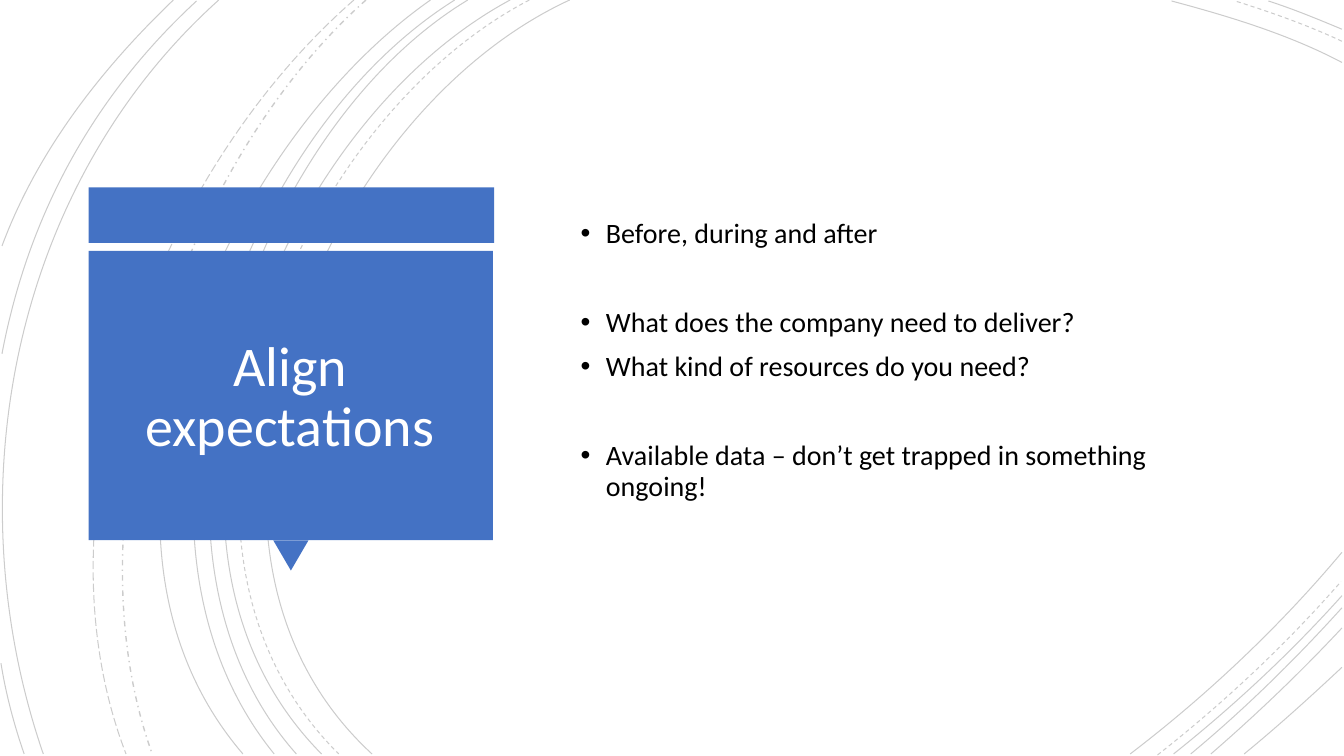
from lxml.etree import SubElement
from pptx import Presentation
from pptx.dml.color import RGBColor
from pptx.enum.dml import MSO_LINE
from pptx.enum.shapes import MSO_SHAPE
from pptx.enum.text import MSO_ANCHOR, MSO_AUTO_SIZE, PP_ALIGN
from pptx.oxml.ns import qn
from pptx.util import Inches, Pt

BLUE, BLACK, WHITE = "4472C4", "000000", "FFFFFF"
SOLID, DASH = MSO_LINE.SOLID, MSO_LINE.DASH
LONG, DOT = MSO_LINE.LONG_DASH, MSO_LINE.DASH_DOT

# Each arc: dash, then start, two control points and end as x, y pairs
ARCS = [
    (SOLID, 5.65, 0, 3.15, 1.15, 1.43, 5.4, 3.69, 7.48),
    (SOLID, 13.31, 0.62, 12.78, 0.34, 12.18, 0.16, 11.62, 0.01),
    (SOLID, 11.21, 7.48, 11.97, 6.9, 12.69, 6.22, 13.31, 5.48),
    (DASH, 5.25, 0, 2.85, 1.25, 1.23, 5.37, 3.36, 7.48),
    (DASH, 13.31, 0.41, 12.97, 0.25, 12.6, 0.12, 12.25, 0.01),
    (DASH, 11.48, 7.49, 12.13, 6.98, 12.75, 6.4, 13.3, 5.77),
    (SOLID, 5.06, 0, 2.7, 1.27, 1.1, 5.37, 3.19, 7.48),
    (SOLID, 13.31, 0.29, 13.07, 0.19, 12.83, 0.09, 12.58, 0.01),
    (SOLID, 11.64, 7.48, 12.23, 7.01, 12.8, 6.48, 13.31, 5.91),
    (SOLID, 4.64, 0, 2.44, 1.33, 1.1, 5.41, 2.94, 7.48),
    (SOLID, 11.81, 7.48, 12.34, 7.04, 12.84, 6.55, 13.31, 6.03),
    (SOLID, 4.51, 0, 2.31, 1.38, 0.97, 5.33, 2.72, 7.48),
    (SOLID, 12.01, 7.48, 12.46, 7.09, 12.9, 6.67, 13.31, 6.23),
    (SOLID, 4.27, 0, 2.17, 1.47, 0.53, 5.29, 2.41, 7.48),
    (SOLID, 12.34, 7.48, 12.67, 7.21, 12.99, 6.92, 13.31, 6.62),
    (DOT, 3.63, 0, 1.76, 1.66, 0.65, 5.09, 1.51, 7.48),
    (LONG, 3.51, 0, 1.57, 1.69, 0.29, 4.99, 1.25, 7.48),
    (SOLID, 2.17, 0, 0.11, 1.85, -0.46, 4.9, 0.43, 7.48),
    (SOLID, 1.95, 0.01, 0.92, 0.96, 0.28, 2.14, 0.02, 3.51),
    (SOLID, 0.01, 6.58, 0.06, 6.89, 0.14, 7.19, 0.24, 7.48),
    (SOLID, 1.72, 0, 1, 0.69, 0.37, 1.5, 0.02, 2.44),
]

# Each point: space before in points, text
POINTS = [
    (10, "Before, during and after"),
    (42, "What does the company need to deliver?"),
    (10, "What kind of resources do you need?"),
    (42, "Available data – don’t get trapped in something ongoing!"),
]


def color(code):
    return RGBColor.from_string(code)


class Deck:
    def __init__(self, slide, font="Calibri"):
        self.slide, self.font = slide, font

    def group(self):
        return self.slide.shapes.add_group_shape().shapes

    def arc(self, group, dash, *nums):
        """Draw one open Bezier curve as a faint line."""
        spots = [(Inches(x), Inches(y)) for x, y in zip(nums[::2], nums[1::2])]
        pen = group.build_freeform(*spots[0])
        pen.add_line_segments(spots[1:], close=False)
        shape = pen.convert_to_shape()
        shape.shadow.inherit = False
        shape.fill.background()
        line = shape.line
        line.color.rgb = color(BLACK)
        line.width = Pt(1 if dash == DOT else 0.75)
        line.dash_style = dash
        tint = line._ln.find(".//" + qn("a:srgbClr"))
        SubElement(tint, qn("a:alpha"), val="20000")
        # Turn the three straight segments into one cubic curve
        trace = shape.element.find(".//" + qn("a:path"))
        curve = SubElement(trace, qn("a:cubicBezTo"))
        for step in trace.findall(qn("a:lnTo")):
            curve.append(step[0])
            trace.remove(step)

    def block(self, group, kind, box, turn=0):
        shape = group.add_shape(kind, *map(Inches, box))
        shape.shadow.inherit = False
        shape.fill.solid()
        shape.fill.fore_color.rgb = color(BLUE)
        shape.line.fill.background()
        shape.rotation = turn

    def place(self, holder, box):
        """Move a placeholder to the front and set its text frame."""
        tree = holder.element.getparent()
        tree.append(holder.element)
        holder.left, holder.top, holder.width, holder.height = map(Inches, box)
        frame = holder.text_frame
        frame.word_wrap = True
        frame.auto_size = MSO_AUTO_SIZE.NONE
        frame.vertical_anchor = MSO_ANCHOR.MIDDLE
        return frame

    def style(self, para, size, code):
        para.line_spacing = 0.9
        para.font.name, para.font.size = self.font, Pt(size)
        para.font.color.rgb = color(code)

    def title(self, text, box):
        para = self.place(self.slide.shapes.title, box).paragraphs[0]
        para.text = text
        para.alignment = PP_ALIGN.CENTER
        self.style(para, 40, WHITE)

    def body(self, points, box):
        frame = self.place(self.slide.placeholders[1], box)
        frame.margin_bottom = Inches(0.39)
        for num, (gap, text) in enumerate(points):
            para = frame.add_paragraph() if num else frame.paragraphs[0]
            para.text = text
            para.space_before = Pt(gap)
            self.style(para, 20, BLACK)
            props = para._p.get_or_add_pPr()
            props.set("marL", str(Inches(0.31)))
            props.set("indent", str(Inches(-0.25)))


def main():
    show = Presentation()
    show.slide_width, show.slide_height = Inches(13.33), Inches(7.5)
    deck = Deck(show.slides.add_slide(show.slide_layouts[1]))

    arcs = deck.group()
    for arc in ARCS:
        deck.arc(arcs, *arc)

    panel = deck.group()
    deck.block(panel, MSO_SHAPE.RECTANGLE, (0.88, 1.86, 4.02, 0.55))
    deck.block(panel, MSO_SHAPE.ISOSCELES_TRIANGLE, (2.71, 5.36, 0.35, 0.3), 180)
    deck.block(panel, MSO_SHAPE.RECTANGLE, (0.88, 2.49, 4.01, 2.87))

    deck.title("Align expectations", (0.99, 2.64, 3.77, 2.62))
    deck.body(POINTS, (5.6, 0.88, 6.87, 5.74))
    show.save("out.pptx")


if __name__ == "__main__":
    main()
